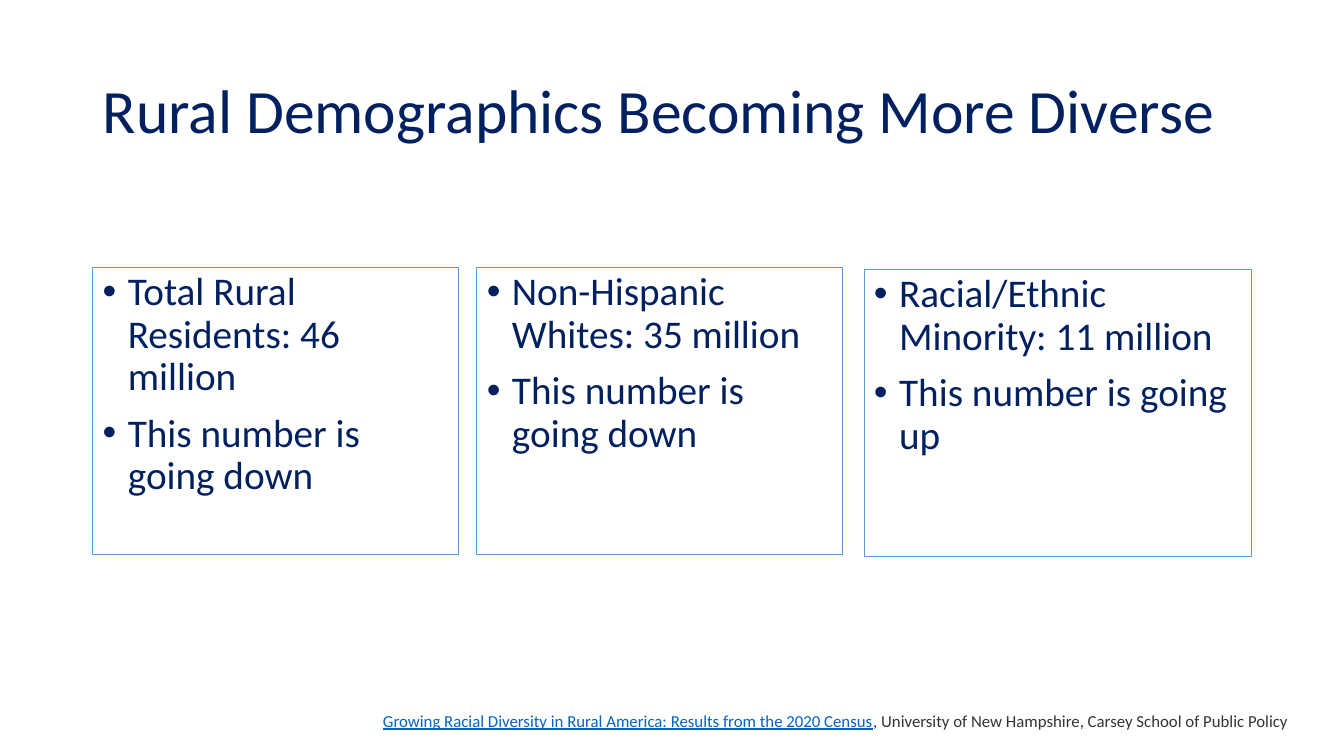
from pptx import Presentation
from pptx.dml.color import RGBColor
from pptx.enum.shapes import MSO_SHAPE
from pptx.enum.text import MSO_ANCHOR, PP_ALIGN
from pptx.oxml.ns import qn
from pptx.util import Inches, Pt
from lxml import etree

COLORS = {"navy": "002060", "border": "5B9BD5", "link": "0563C1", "gray": "333333"}


def add_run(paragraph, text, color, **formats):
    run = paragraph.add_run()
    run.text = text
    run.font.color.rgb = RGBColor.from_string(COLORS[color])
    for attribute, value in {"name": "Calibri", **formats}.items():
        setattr(run.font, attribute, value)


prs = Presentation()
prs.slide_width = Inches(13.33)
prs.slide_height = Inches(7.5)
slide = prs.slides.add_slide(prs.slide_layouts[6])

title = slide.shapes.add_textbox(Inches(0.92), Inches(0.4), Inches(11.5), Inches(1.45)).text_frame
title.word_wrap = True
title.vertical_anchor = MSO_ANCHOR.MIDDLE
title.paragraphs[0].line_spacing = 0.9
add_run(title.paragraphs[0], "Rural Demographics Becoming More Diverse", "navy", size=Pt(44))

groups = [
    (0.92, 2.65, 3.63, "Total Rural Residents: 46 million", "This number is going down"),
    (4.73, 2.65, 3.63, "Non-Hispanic Whites: 35 million", "This number is going down"),
    (8.57, 2.67, 3.84, "Racial/Ethnic Minority: 11 million", "This number is going up"),
]
for left, top, width, population, trend in groups:
    card = slide.shapes.add_shape(
        MSO_SHAPE.RECTANGLE, Inches(left), Inches(top), Inches(width), Inches(2.85)
    )
    card.shadow.inherit = False
    card.fill.background()
    card.line.color.rgb = RGBColor.from_string(COLORS["border"])
    card.line.width = Pt(0.75)
    facts = card.text_frame
    facts.word_wrap = True
    facts.vertical_anchor = MSO_ANCHOR.TOP
    for fact, gap in ((population, 0), (trend, 10)):
        paragraph = facts.add_paragraph() if gap else facts.paragraphs[0]
        paragraph.alignment = PP_ALIGN.LEFT
        paragraph.line_spacing = 0.9
        paragraph.space_before = Pt(gap)
        properties = paragraph._p.get_or_add_pPr()
        properties.set("marL", str(Inches(0.25)))
        properties.set("indent", str(Inches(-0.25)))
        etree.SubElement(properties, qn("a:buFont")).set("typeface", "Arial")
        etree.SubElement(properties, qn("a:buChar")).set("char", "•")
        add_run(paragraph, fact, "navy", size=Pt(28))

citation = slide.shapes.add_textbox(Inches(3.7), Inches(7), Inches(9.34), Inches(0.3)).text_frame
citation.word_wrap = True
add_run(
    citation.paragraphs[0],
    "Growing Racial Diversity in Rural America: Results from the 2020 Census",
    "link", size=Pt(12), underline=True,
)
add_run(
    citation.paragraphs[0],
    ", University of New Hampshire, Carsey School of Public Policy",
    "gray", size=Pt(12),
)

prs.save("out.pptx")
